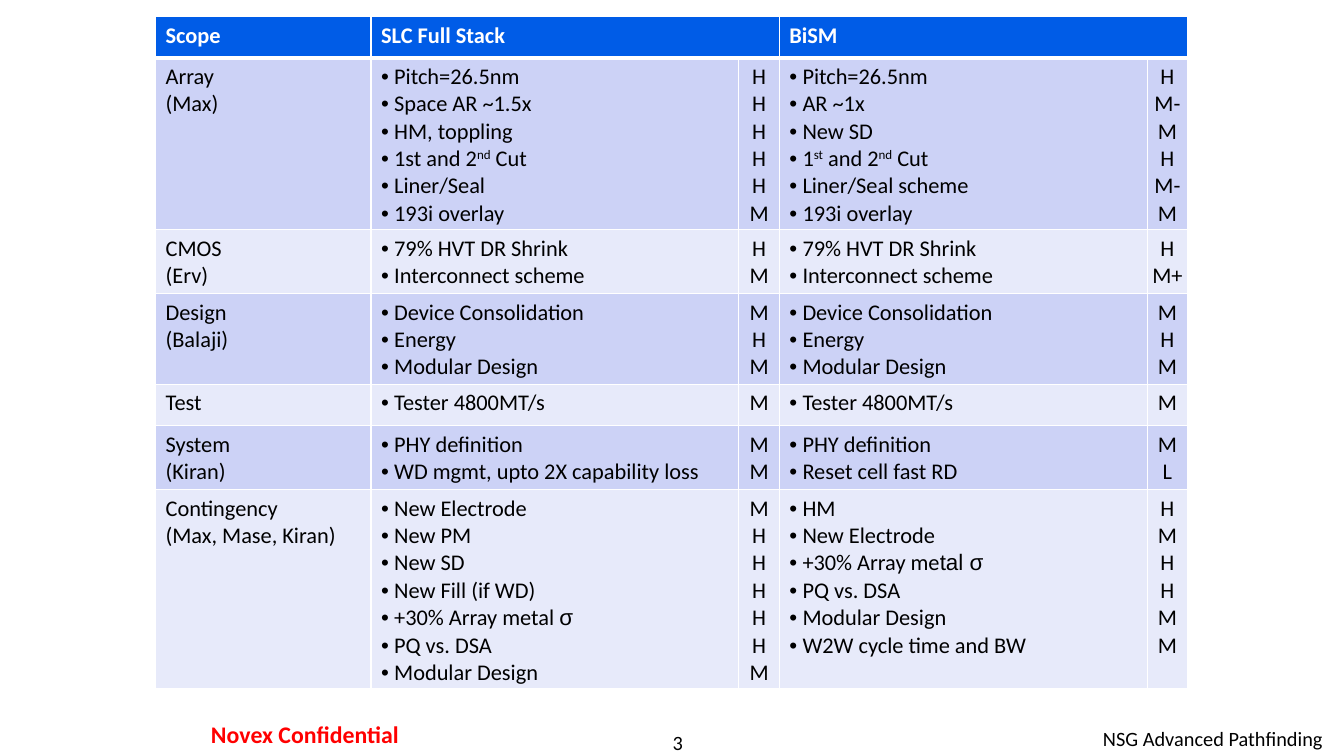
from dataclasses import dataclass

from lxml.etree import SubElement
from pptx import Presentation
from pptx.dml.color import RGBColor
from pptx.enum.text import MSO_AUTO_SIZE, PP_ALIGN
from pptx.oxml.ns import qn
from pptx.util import Cm, Pt


@dataclass(frozen=True)
class Theme:
    font: str = "Calibri"
    symbol_font: str = "Arial"
    body_size: float = 16
    footer_size: float = 14.5
    notice_size: float = 17
    ink: str = "000000"
    paper: str = "FFFFFF"
    header: str = "005CE7"
    bands: tuple = ("CCD2F6", "E7EAFA")
    alert: str = "FF0000"


THEME = Theme()
COLUMN_WIDTHS = (5.43, 9.27, 1.02, 9.27, 1.02)
MINIMUM_ROW, LINE_HEIGHT, ROW_PADDING = 1.04, 0.68, 0.25
HEADINGS = ("Scope", "SLC Full Stack", "", "BiSM", "")

# Scope, then items and ratings for each option. In items, "|" separates spans;
# a leading "^" marks superscript and a leading "@" the symbol font.
SCOPE_ROWS = [
    (["Array", "(Max)"],
     ["Pitch=26.5nm", "Space AR ~1.5x", "HM, toppling", "1st and 2|^nd| Cut",
      "Liner/Seal", "193i overlay"],
     "H H H H H M",
     ["Pitch=26.5nm", "AR ~1x", "New SD", "1|^st| and 2|^nd| Cut",
      "Liner/Seal scheme", "193i overlay"],
     "H M- M H M- M"),
    (["CMOS", "(Erv)"],
     ["79% HVT DR Shrink", "Interconnect scheme"], "H M",
     ["79% HVT DR Shrink", "Interconnect scheme"], "H M+"),
    (["Design", "(Balaji)"],
     ["Device Consolidation", "Energy", "Modular Design"], "M H M",
     ["Device Consolidation", "Energy", "Modular Design"], "M H M"),
    (["Test"], ["Tester 4800MT/s"], "M", ["Tester 4800MT/s"], "M"),
    (["System", "(Kiran)"],
     ["PHY definition", "WD mgmt, upto 2X capability loss"], "M M",
     ["PHY definition", "Reset cell fast RD"], "M L"),
    (["Contingency", "(Max, Mase, Kiran)"],
     ["New Electrode", "New PM", "New SD", "New Fill (if WD)",
      "+30% Array metal |@σ", "PQ vs. DSA", "Modular Design"],
     "M H H H H H M",
     ["HM", "New Electrode", "+30% Array me|@tal σ", "PQ vs. DSA",
      "Modular Design", "W2W cycle time and BW"],
     "H M H H M M"),
]


def set_values(target, values):
    for name, value in values.items():
        setattr(target, name, value)


def add_span(para, text, size, color, bold=False):
    span = para.add_run()
    span.text = text.lstrip("^@")
    name = THEME.symbol_font if text.startswith("@") else THEME.font
    set_values(span.font, {"name": name, "size": Pt(size), "bold": bold})
    span.font.color.rgb = RGBColor.from_string(color)
    if text.startswith("^"):
        span.font._element.set("baseline", "30000")


def add_bullet(para):
    properties = para._p.get_or_add_pPr()
    indent = Cm(0.33)
    properties.set("marL", str(indent))
    properties.set("indent", str(-indent))
    SubElement(properties, qn("a:buFont")).set("typeface", THEME.symbol_font)
    SubElement(properties, qn("a:buChar")).set("char", "•")


def write_lines(frame, lines, size, color, bold=False, align=PP_ALIGN.LEFT, bullets=False):
    for index, line in enumerate(lines):
        para = frame.add_paragraph() if index else frame.paragraphs[0]
        para.alignment = align
        if bullets:
            add_bullet(para)
        for part in line.split("|"):
            add_span(para, part, size, color, bold)


def style_cell(cell, fill, top=1, bottom=1):
    """Give the cell white borders, widths in points, and a solid fill."""
    properties = cell._tc.get_or_add_tcPr()
    for side, width in (("L", 1), ("R", 1), ("T", top), ("B", bottom)):
        line = SubElement(properties, qn(f"a:ln{side}"))
        line.set("w", str(Pt(width)))
        solid = SubElement(line, qn("a:solidFill"))
        SubElement(solid, qn("a:srgbClr")).set("val", THEME.paper)
    cell.fill.solid()
    cell.fill.fore_color.rgb = RGBColor.from_string(fill)


def fill_header(table):
    for column, heading in enumerate(HEADINGS):
        cell = table.cell(0, column)
        style_cell(cell, THEME.header, bottom=3)
        if heading:
            write_lines(cell.text_frame, [heading], THEME.body_size, THEME.paper, bold=True)
    for column in (1, 3):
        table.cell(0, column).merge(table.cell(0, column + 1))


def fill_scope_row(table, number, entries):
    for column, entry in enumerate(entries):
        cell = table.cell(number, column)
        style_cell(cell, THEME.bands[(number - 1) % 2], top=3 if number == 1 else 1)
        is_rating = column in (2, 4)
        if is_rating:
            set_values(cell, {"margin_left": 0, "margin_right": 0})
        write_lines(cell.text_frame, entry.split() if is_rating else entry,
                    THEME.body_size, THEME.ink,
                    align=PP_ALIGN.CENTER if is_rating else PP_ALIGN.LEFT,
                    bullets=column in (1, 3))


def add_scope_table(page):
    line_counts = [1] + [max(len(row[1]), len(row[3])) for row in SCOPE_ROWS]
    heights = [max(MINIMUM_ROW, ROW_PADDING + LINE_HEIGHT * count) for count in line_counts]
    frame = page.shapes.add_table(len(heights), len(COLUMN_WIDTHS), Cm(3.92), Cm(0.42),
                                  Cm(sum(COLUMN_WIDTHS)), Cm(sum(heights)))
    table = frame.table
    table.horz_banding = False
    for column, width in zip(table.columns, COLUMN_WIDTHS):
        column.width = Cm(width)
    for row, height in zip(table.rows, heights):
        row.height = Cm(height)
    fill_header(table)
    for number, entries in enumerate(SCOPE_ROWS, 1):
        fill_scope_row(table, number, entries)


def add_footer(page, text, place, insets, size, color, align, bold=False):
    box = page.shapes.add_textbox(*map(Cm, place))
    across, down = map(Cm, insets)
    set_values(box.text_frame, {
        "word_wrap": True, "auto_size": MSO_AUTO_SIZE.SHAPE_TO_FIT_TEXT,
        "margin_left": across, "margin_right": across,
        "margin_top": down, "margin_bottom": down,
    })
    write_lines(box.text_frame, [text], size, color, bold, align)


def main():
    deck = Presentation()
    set_values(deck, {"slide_width": Cm(33.87), "slide_height": Cm(19.05)})
    page = deck.slides.add_slide(deck.slide_layouts[6])
    add_footer(page, "3", (14.12, 18.39, 5.92, 0.61), (0, 0),
               THEME.footer_size, THEME.ink, PP_ALIGN.CENTER)
    add_footer(page, "NSG Advanced Pathfinding", (22.43, 18.16, 11.15, 0.89), (0.25, 0.13),
               THEME.footer_size, THEME.ink, PP_ALIGN.RIGHT)
    add_footer(page, "Novex Confidential", (3.94, 17.98, 7.49, 1.04), (0.3, 0.15),
               THEME.notice_size, THEME.alert, PP_ALIGN.CENTER, bold=True)
    add_scope_table(page)
    deck.save("out.pptx")


if __name__ == "__main__":
    main()
